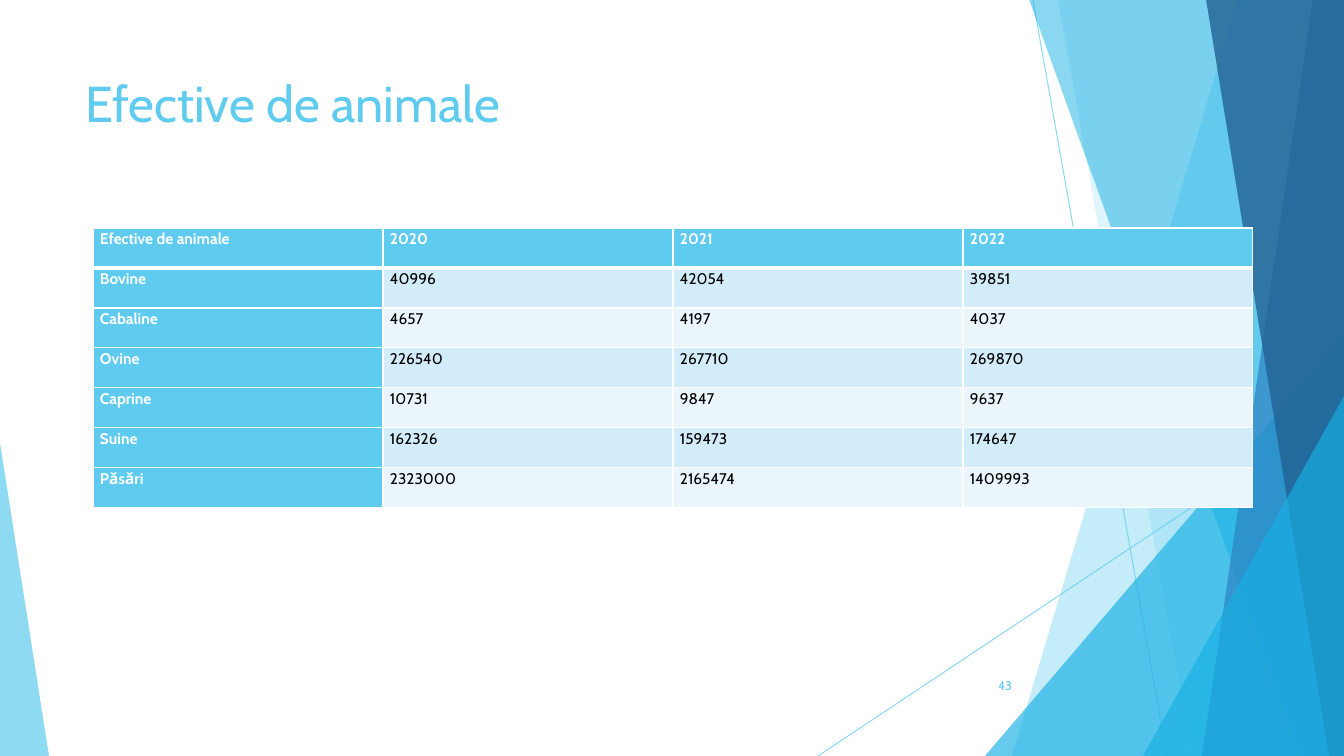
import pptx
import pptx.util
import pptx.dml.color
import pptx.enum.shapes
import pptx.enum.text
import pptx.oxml
import pptx.oxml.ns

PX = 914400 / 100.8
SKY, CYAN, BLUE, NAVY = "5FCBEF", "17B0E4", "2E83C3", "226292"
WHITE, BLACK = "FFFFFF", "000000"
BANDS = ["D2ECF9", "EAF6FC"]
W, H = 1344, 756

LIVESTOCK = [
    ["Efective de animale", "2020", "2021", "2022"],
    ["Bovine", "40996", "42054", "39851"],
    ["Cabaline", "4657", "4197", "4037"],
    ["Ovine", "226540", "267710", "269870"],
    ["Caprine", "10731", "9847", "9637"],
    ["Suine", "162326", "159473", "174647"],
    ["Păsări", "2323000", "2165474", "1409993"],
]


def px(n):
    return pptx.util.Emu(round(n * PX))


def rgb(hex_color):
    return pptx.dml.color.RGBColor.from_string(hex_color)


def add_xml(parent, tag, **attrs):
    el = parent.makeelement(pptx.oxml.ns.qn(tag), attrs)
    parent.append(el)
    return el


class Deck:
    font = "Cabin"

    def __init__(self):
        self.prs = pptx.Presentation()
        self.prs.slide_width, self.prs.slide_height = px(W), px(H)
        self.s = self.prs.slides.add_slide(self.prs.slide_layouts[5])

    def alpha(self, fill, percent):
        clr = fill._xPr.find(".//" + pptx.oxml.ns.qn("a:srgbClr"))
        add_xml(clr, "a:alpha", val=str(percent * 1000))

    def paint(self, sp, color, opacity):
        sp.shadow.inherit = False
        sp.fill.solid()
        sp.fill.fore_color.rgb = rgb(color)
        self.alpha(sp.fill, opacity)
        sp.line.fill.background()

    def line(self, x1, y1, x2, y2):
        c = self.s.shapes.add_connector(
            pptx.enum.shapes.MSO_CONNECTOR.STRAIGHT, px(x1), px(y1), px(x2), px(y2))
        c.line.width = pptx.util.Pt(0.75)
        c.line.color.rgb = rgb(SKY)
        self.alpha(c.line.fill, 70)
        add_xml(c._element.spPr, "a:effectLst")

    def band(self, top, bottom, color, opacity):
        """Strip from a slanted left edge to the right side of the slide."""
        fb = self.s.shapes.build_freeform(top, -1, PX)
        fb.add_line_segments([(W, -1), (W, H), (bottom, H)], close=True)
        self.paint(fb.convert_to_shape(), color, opacity)

    def triangle(self, x, y, w, h, apex, color, opacity):
        sp = self.s.shapes.add_shape(
            pptx.enum.shapes.MSO_SHAPE.ISOSCELES_TRIANGLE, px(x), px(y), px(w), px(h))
        sp.adjustments[0] = apex
        self.paint(sp, color, opacity)

    def run(self, p, text, size, color, bold=False):
        r = p.add_run()
        r.text = text
        r.font.name = self.font
        r.font.size = pptx.util.Pt(size)
        r.font.color.rgb = rgb(color)
        r.font.bold = bold

    def title(self, x, y, w, h, text):
        sp = self.s.shapes.title
        self.s.shapes._spTree.append(sp._element)  # in front of the backdrop
        sp.left, sp.top, sp.width, sp.height = map(px, (x, y, w, h))
        tf = sp.text_frame
        tf.word_wrap = True
        tf.vertical_anchor = pptx.enum.text.MSO_ANCHOR.TOP
        p = tf.paragraphs[0]
        p.alignment = pptx.enum.text.PP_ALIGN.LEFT
        self.run(p, text, 36, SKY)

    def text(self, x, y, w, h, text, size, color):
        tf = self.s.shapes.add_textbox(px(x), px(y), px(w), px(h)).text_frame
        tf.word_wrap = True
        tf.vertical_anchor = pptx.enum.text.MSO_ANCHOR.MIDDLE
        p = tf.paragraphs[0]
        p.alignment = pptx.enum.text.PP_ALIGN.RIGHT
        self.run(p, text, size, color)

    def borders(self, cell, top, bottom):
        tcPr = cell._tc.get_or_add_tcPr()
        for i, (side, pt) in enumerate([("L", 1), ("R", 1), ("T", top), ("B", bottom)]):
            ln = add_xml(tcPr, "a:ln" + side, w=str(pt * 12700))
            add_xml(add_xml(ln, "a:solidFill"), "a:srgbClr", val=WHITE)
            tcPr.insert(i, ln)  # borders come before the fill

    def table(self, x, y, col_w, row_h, rows):
        n, m = len(rows), len(rows[0])
        t = self.s.shapes.add_table(
            n, m, px(x), px(y), px(col_w * m), px(row_h * n)).table
        t.first_col = True
        for col in t.columns:
            col.width = px(col_w)
        for i, row in enumerate(rows):
            t.rows[i].height = px(row_h)
            for j, value in enumerate(row):
                head = i == 0 or j == 0
                cell = t.cell(i, j)
                cell.margin_left = cell.margin_right = px(7)
                cell.margin_top = cell.margin_bottom = 0
                cell.fill.solid()
                cell.fill.fore_color.rgb = rgb(SKY if head else BANDS[(i - 1) % 2])
                self.borders(cell, 3 if i == 1 else 1, 3 if i == 0 else 1)
                p = cell.text_frame.paragraphs[0]
                p.line_spacing = 1.07
                p.space_after = pptx.util.Pt(8)
                self.run(p, value, 11, WHITE if head else BLACK, head)


def main():
    d = Deck()

    # Faceted backdrop, back to front
    d.line(1033, 0, 1167, H)
    d.line(W, 406, 818, H)
    d.band(1238, 1012, SKY, 36)
    d.band(1058, 1192, SKY, 20)
    d.triangle(985, 336, 359, 420, 1, CYAN, 66)
    d.band(1029, 1301, CYAN, 50)
    d.band(1313, 1202, BLUE, 70)
    d.band(1206, 1329, NAVY, 80)
    d.triangle(1143, 396, 201, 360, 1, CYAN, 66)
    d.triangle(0, 443, 49, 313, 0, SKY, 70)

    # Title, livestock table and page number
    d.title(75, 67, 948, 145, "Efective de animale")
    d.table(93, 228, 290, 40, LIVESTOCK)
    d.text(947, 666, 75, 40, "43", 9, SKY)

    d.prs.save("out.pptx")


if __name__ == "__main__":
    main()
